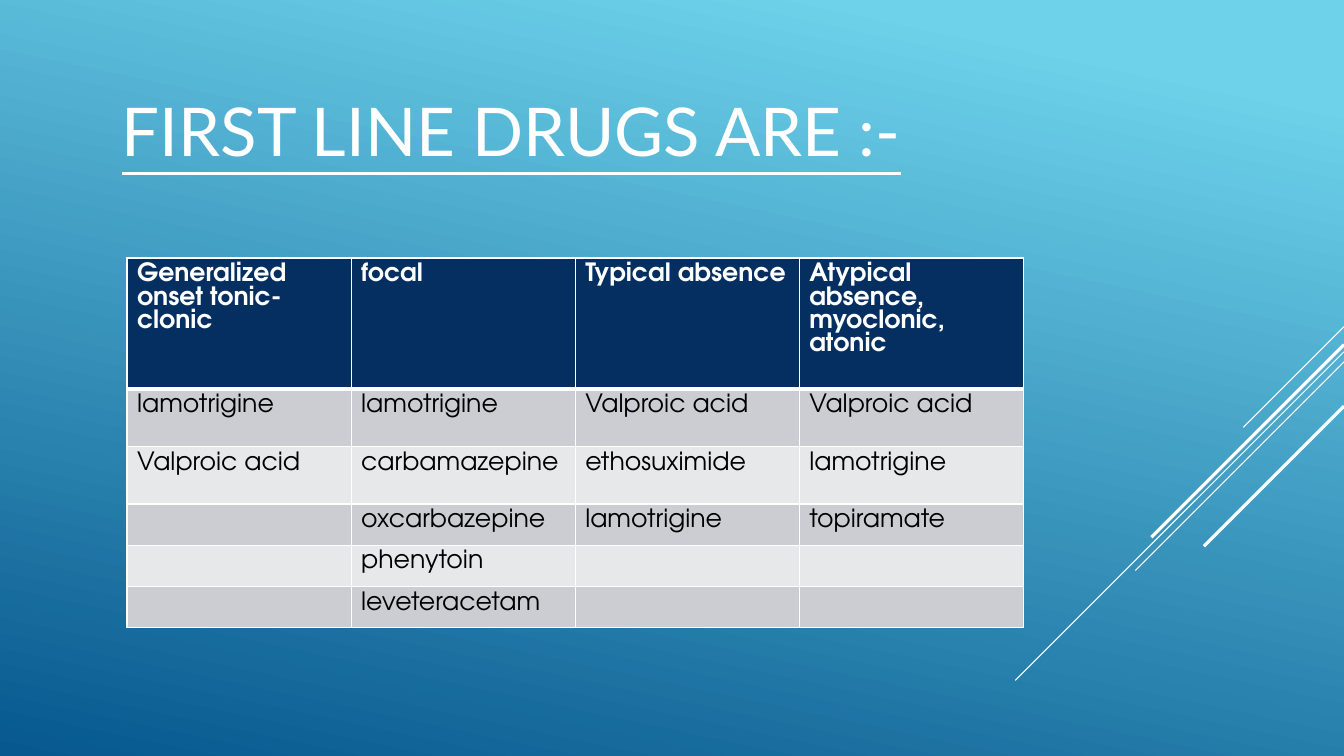
"""Build a slide listing first line drugs by seizure type."""
from dataclasses import dataclass

from lxml.etree import SubElement
from pptx import Presentation
from pptx.dml.color import RGBColor
from pptx.enum.shapes import MSO_CONNECTOR
from pptx.enum.text import MSO_ANCHOR
from pptx.oxml.ns import qn
from pptx.util import Inches, Pt


@dataclass(frozen=True)
class Theme:
    white: str = "FFFFFF"
    black: str = "000000"
    sky: str = "6ED2EB"
    ocean: str = "06588E"
    navy: str = "052F61"
    bands: tuple = ("CCCDD2", "E7E8EA")
    title_font: str = "Lato"
    table_font: str = "TeX Gyre Adventor"
    title_size: int = 48
    table_size: int = 18


theme = Theme()


def style_font(font, name, size, color, bold=False):
    font.name = name
    font.size = Pt(size)
    font.bold = bold
    font.color.rgb = RGBColor.from_string(color)


def add_border(cell, side, width):
    border = SubElement(cell._tc.get_or_add_tcPr(), qn(f"a:{side}"), w=str(Pt(width)))
    SubElement(SubElement(border, qn("a:solidFill")), qn("a:srgbClr"), val=theme.white)


deck = Presentation()
deck.slide_width = Inches(13.33)
deck.slide_height = Inches(7.5)
slide = deck.slides.add_slide(deck.slide_layouts[6])

backdrop = slide.background.fill
backdrop.gradient()
backdrop.gradient_angle = 360 - 102
for stop, (position, color) in zip(
    backdrop.gradient_stops, [(0.1, theme.sky), (1, theme.ocean)]
):
    stop.position = position
    stop.color.rgb = RGBColor.from_string(color)

streaks = [
    (3.24, 1.00, 0.75),
    (3.49, 3.26, 0.75),
    (3.59, 2.07, 0.75),
    (3.42, 1.91, 2.25),
    (4.03, 1.39, 2.25),
]
for top, reach, weight in streaks:
    streak = slide.shapes.add_connector(
        MSO_CONNECTOR.STRAIGHT,
        Inches(13.33), Inches(top), Inches(13.33 - reach), Inches(top + reach),
    )
    streak.line.width = Pt(weight)
    streak.line.color.rgb = RGBColor.from_string(theme.white)
    SubElement(streak._element.spPr, qn("a:effectLst"))

title = slide.shapes.add_textbox(Inches(1.11), Inches(0.46), Inches(9.33), Inches(1.65))
title.text_frame.word_wrap = True
title.text_frame.vertical_anchor = MSO_ANCHOR.MIDDLE
heading = title.text_frame.paragraphs[0]
heading.text = "FIRST LINE DRUGS ARE :-"
style_font(heading.font, theme.title_font, theme.title_size, theme.white)
heading.font.underline = True

drug_rows = [
    ("Generalized onset tonic-clonic", "focal", "Typical absence",
     "Atypical absence, myoclonic, atonic"),
    ("lamotrigine", "lamotrigine", "Valproic acid", "Valproic acid"),
    ("Valproic acid", "carbamazepine", "ethosuximide", "lamotrigine"),
    ("", "oxcarbazepine", "lamotrigine", "topiramate"),
    ("", "phenytoin", "", ""),
    ("", "leveteracetam", "", ""),
]
row_heights = [1.02, 0.57, 0.57, 0.41, 0.41, 0.41]
drugs = slide.shapes.add_table(
    len(drug_rows), len(drug_rows[0]),
    Inches(1.26), Inches(2.56), Inches(8.89), Inches(sum(row_heights)),
).table

for row, (names, height) in enumerate(zip(drug_rows, row_heights)):
    drugs.rows[row].height = Inches(height)
    is_header = row == 0
    fill = theme.navy if is_header else theme.bands[(row - 1) % 2]
    ink = theme.white if is_header else theme.black
    for column, name in enumerate(names):
        cell = drugs.cell(row, column)
        add_border(cell, "lnL", 1)
        add_border(cell, "lnR", 1)
        add_border(cell, "lnT", 3 if row == 1 else 1)
        add_border(cell, "lnB", 3 if is_header else 1)
        cell.fill.solid()
        cell.fill.fore_color.rgb = RGBColor.from_string(fill)
        entry = cell.text_frame.paragraphs[0]
        entry.text = name
        style_font(entry.font, theme.table_font, theme.table_size, ink, is_header)

deck.save("out.pptx")
